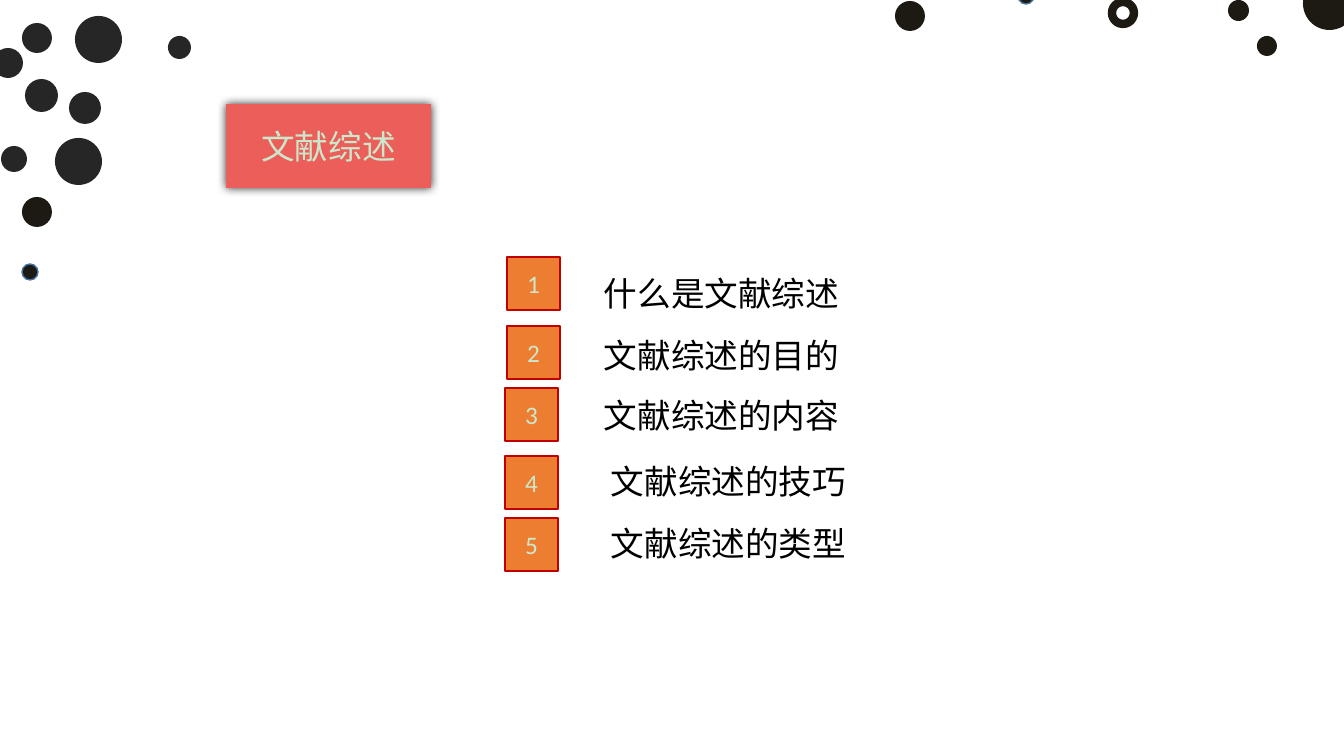
from lxml import etree
from pptx import Presentation
from pptx.dml.color import RGBColor
from pptx.enum.shapes import MSO_SHAPE
from pptx.enum.text import MSO_ANCHOR, MSO_AUTO_SIZE, PP_ALIGN
from pptx.oxml.ns import qn
from pptx.util import Inches, Pt

PX = Inches(1) / 100.8
OVAL, RECT = MSO_SHAPE.OVAL, MSO_SHAPE.RECTANGLE
MIDDLE, CENTER = MSO_ANCHOR.MIDDLE, PP_ALIGN.CENTER
NO_FIT, GROW = MSO_AUTO_SIZE.NONE, MSO_AUTO_SIZE.SHAPE_TO_FIT_TEXT

WHITE = RGBColor(0xFF, 0xFF, 0xFF)
BLACK = RGBColor(0x00, 0x00, 0x00)
GRAY = RGBColor(0x26, 0x26, 0x26)
DARK = RGBColor(0x1D, 0x19, 0x13)
BLUE = RGBColor(0x43, 0x73, 0x9E)
CORAL = RGBColor(0xEB, 0x5E, 0x59)
ORANGE = RGBColor(0xED, 0x7D, 0x31)
RED = RGBColor(0xC0, 0x00, 0x00)
MINT = RGBColor(0xCC, 0xE8, 0xCC)
CJK, LATIN = "Noto Sans CJK SC", "Calibri"

# left, top, diameter, fill, line colour, line width in points
LEFT_DOTS = [
    (168, 36, 23, GRAY, None, 0), (1, 146, 26, GRAY, None, 0),
    (69, 92, 32, GRAY, None, 0), (-7, 48, 30, GRAY, None, 0),
    (22, 264, 16, DARK, BLUE, 1), (25, 79, 33, GRAY, None, 0),
    (75, 16, 47, GRAY, None, 0), (22, 197, 30, DARK, None, 0),
    (22, 23, 30, GRAY, None, 0), (55, 138, 47, GRAY, None, 0),
]
RIGHT_DOTS = [
    (123, -12, 16, DARK, BLUE, 1), (333, 0, 21, DARK, None, 0),
    (408, -23, 53, DARK, None, 0), (362, 36, 20, DARK, None, 0),
    (217, 2, 22, None, DARK, 6), (0, 1, 30, DARK, None, 0),
]
# text, number left, number top, text left, text top, text width
TOPICS = [
    ("什么是文献综述", 2, 0, 89, 11, 295),
    ("文献综述的目的", 2, 69, 89, 73, 295),
    ("文献综述的内容", 0, 131, 89, 133, 367),
    ("文献综述的技巧", 0, 199, 96, 199, 367),
    ("文献综述的类型", 0, 261, 96, 261, 367),
]


def px(*lengths):
    return [round(n * PX) for n in lengths]


def add_box(slide, kind, box, fill, line=None, width=0):
    sp = slide.shapes.add_shape(kind, *px(*box))
    sp.shadow.inherit = False
    if fill is None:
        sp.fill.background()
    else:
        sp.fill.solid()
        sp.fill.fore_color.rgb = fill
    if line is None:
        sp.line.fill.background()
    else:
        sp.line.color.rgb = line
        sp.line.width = Pt(width)
    return sp


def write(sp, text, font, size, color, align=None):
    p = sp.text_frame.paragraphs[0]
    r = p.add_run()
    r.text = text
    p.alignment = align
    p.font.name, p.font.size, p.font.color.rgb = font, Pt(size), color
    if font == CJK:
        etree.SubElement(r.font._element, qn("a:ea"), typeface=font)


def add_glow_shadow(sp):
    """Put a soft dark shadow evenly around the shape."""
    effects = etree.SubElement(sp._element.spPr, qn("a:effectLst"))
    shadow = etree.SubElement(effects, qn("a:outerShdw"), blurRad=str(Pt(7)),
                              dist="0", dir="2700000", algn="ctr", rotWithShape="0")
    color = etree.SubElement(shadow, qn("a:srgbClr"), val=str(BLACK))
    etree.SubElement(color, qn("a:alpha"), val="84000")


def add_dots(slide, left, top, dots):
    for x, y, d, fill, line, width in dots:
        add_box(slide, OVAL, (left + x, top + y, d, d), fill, line, width)


def format_title(slide, left, top, width, height):
    sp = slide.shapes.title
    sp.left, sp.top, sp.width, sp.height = px(left, top, width, height)
    sp.fill.solid()
    sp.fill.fore_color.rgb = CORAL
    sp.line.fill.background()
    add_glow_shadow(sp)
    tf = sp.text_frame
    tf.auto_size, tf.vertical_anchor, tf.word_wrap = NO_FIT, MIDDLE, True
    write(sp, "文献综述", CJK, 24, MINT, CENTER)


def add_topics(slide, left, top):
    for number, (text, nx, ny, tx, ty, width) in enumerate(TOPICS, 1):
        sp = add_box(slide, RECT, (left + nx, top + ny, 53, 53), ORANGE, RED, 1)
        sp.text_frame.vertical_anchor = MIDDLE
        write(sp, str(number), LATIN, 18, MINT, CENTER)
        label = slide.shapes.add_textbox(*px(left + tx, top + ty, width, 50))
        label.text_frame.word_wrap = True
        label.text_frame.auto_size = GROW
        write(label, text, CJK, 24, BLACK)


def main():
    prs = Presentation()
    prs.slide_width, prs.slide_height = px(1344, 756)
    slide = prs.slides.add_slide(prs.slide_layouts[5])
    slide.background.fill.solid()
    slide.background.fill.fore_color.rgb = WHITE
    add_dots(slide, 0, 0, LEFT_DOTS)
    add_dots(slide, 895, 0, RIGHT_DOTS)
    format_title(slide, 226, 104, 205, 84)
    add_topics(slide, 505, 257)
    prs.save("out.pptx")


if __name__ == "__main__":
    main()
